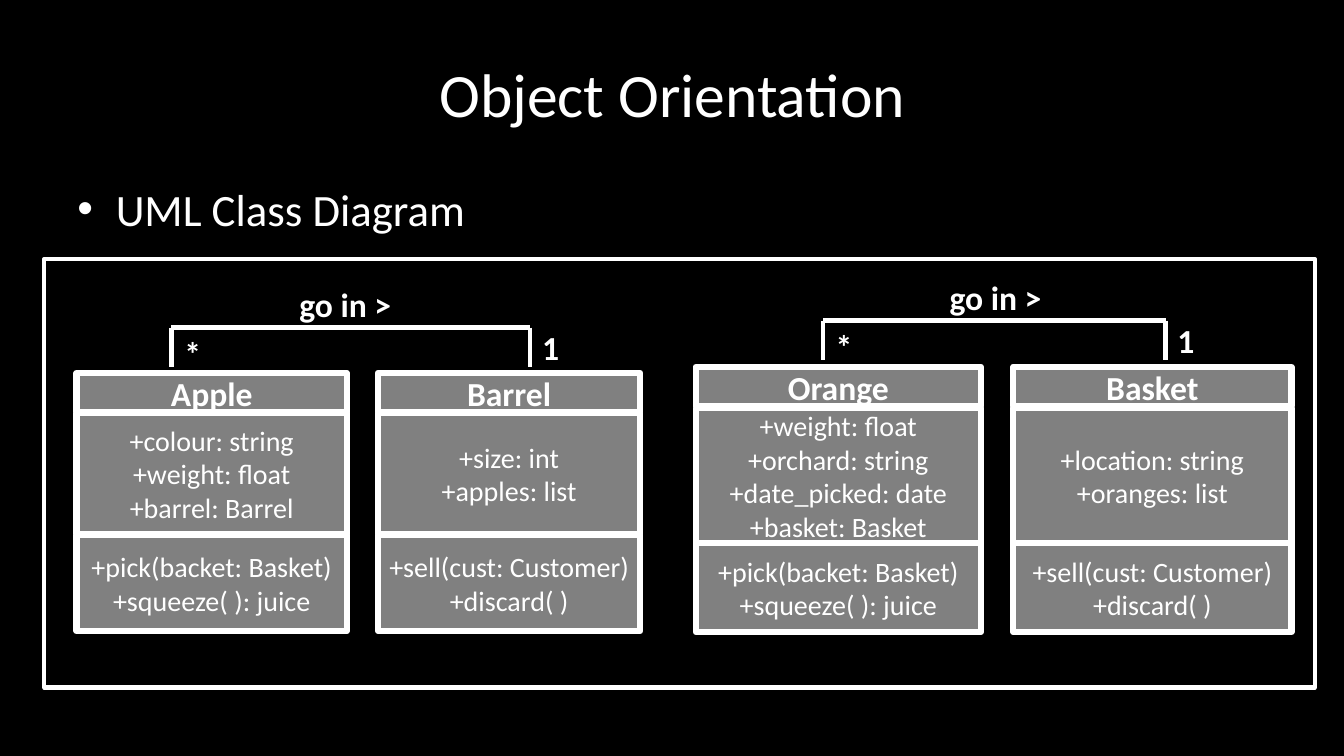
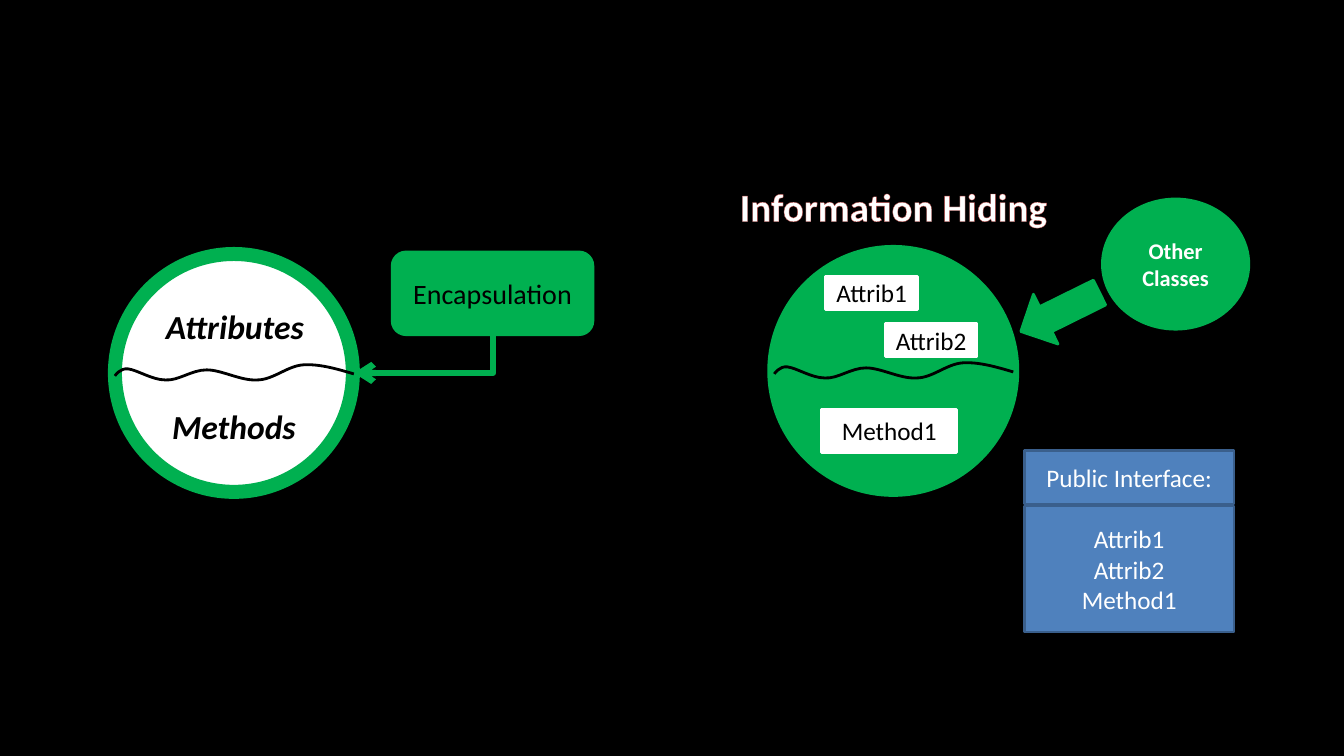
from lxml import etree
from pptx import Presentation
from pptx.dml.color import RGBColor
from pptx.enum.shapes import MSO_CONNECTOR as CONNECTOR, MSO_SHAPE as SHAPE
from pptx.enum.text import MSO_ANCHOR as ANCHOR, PP_ALIGN as ALIGN
from pptx.oxml.ns import qn
from pptx.util import Pt

PX = 9144  # one px is a hundredth of an inch
FONT = "Calibri"
BLACK, WHITE, GRAY = "000000", "FFFFFF", "808080"
GREEN, BLUE, DARK_BLUE, RED = "00B050", "4F81BD", "3A5F8C", "C0504D"
color = RGBColor.from_string


def write(shape, text, size=20, ink=WHITE, bold=False, italic=False,
          align=ALIGN.CENTER, anchor=ANCHOR.MIDDLE, wrap=True, bullet=None):
    frame = shape.text_frame
    frame.word_wrap = wrap
    frame.vertical_anchor = anchor
    for number, line in enumerate(text.split("\n")):
        paragraph = frame.add_paragraph() if number else frame.paragraphs[0]
        paragraph.alignment = align
        if bullet:
            properties = paragraph._p.get_or_add_pPr()
            properties.set("marL", str(38 * PX))
            properties.set("indent", str(-38 * PX))
            etree.SubElement(properties, qn("a:buFont")).set("typeface", "Arial")
            etree.SubElement(properties, qn("a:buChar")).set("char", bullet)
        run = paragraph.add_run()
        run.text = line
        font = run.font
        font.name, font.size = FONT, Pt(size)
        font.bold, font.italic = bold, italic
        font.color.rgb = color(ink)
    return shape


def add_box(slide, kind, bounds, fill, line, width):
    shape = slide.shapes.add_shape(kind, *[value * PX for value in bounds])
    shape.shadow.inherit = False
    if fill:
        shape.fill.solid()
        shape.fill.fore_color.rgb = color(fill)
    else:
        shape.fill.background()
    shape.line.color.rgb = color(line)
    shape.line.width = Pt(width)
    return shape


presentation = Presentation()
presentation.slide_width, presentation.slide_height = 1333 * PX, 750 * PX
background = presentation.slide_master.background.fill
background.solid()
background.fore_color.rgb = color(BLACK)
connectors = []  # connector, colour, width

# Slide 1: class diagram
slide = presentation.slides.add_slide(presentation.slide_layouts[5])
title = slide.shapes.title
title.left, title.top, title.width, title.height = 67 * PX, 30 * PX, 1200 * PX, 125 * PX
write(title, "Object Orientation", size=44)
body = slide.shapes.add_textbox(67 * PX, 175 * PX, 1200 * PX, 495 * PX)
write(body, "UML Class Diagram", size=32, align=ALIGN.LEFT, anchor=ANCHOR.TOP, bullet="•")

# Each group: row tops and heights, association (left, right, top, label left), classes
groups = [
    ([(370, 39), (410, 120), (531, 95)], (170, 526, 325, 287), [
        (76, 268, ["Apple", "+colour: string\n+weight: float\n+barrel: Barrel",
                   "+pick(backet: Basket)\n+squeeze( ): juice"]),
        (375, 260, ["Barrel", "+size: int\n+apples: list",
                    "+sell(cust: Customer)\n+discard( )"]),
    ]),
    ([(364, 39), (405, 134), (539, 88)], (816, 1156, 318, 932), [
        (690, 283, ["Orange", "+weight: float\n+orchard: string\n+date_picked: date\n+basket: Basket",
                    "+pick(backet: Basket)\n+squeeze( ): juice"]),
        (1005, 276, ["Basket", "+location: string\n+oranges: list",
                     "+sell(cust: Customer)\n+discard( )"]),
    ]),
]
for rows, (left, right, top, label_left), classes in groups:
    for class_left, class_width, texts in classes:
        for number, ((row_top, row_height), text) in enumerate(zip(rows, texts)):
            cell = add_box(slide, SHAPE.RECTANGLE,
                           (class_left, row_top, class_width, row_height), GRAY, WHITE, 4.5)
            write(cell, text, size=20 if number else 24, bold=number == 0)

    # Association bracket and its labels
    for ends in [(right, top, left, top), (left, top, left, top + 39),
                 (right, top, right, top + 39)]:
        connector = slide.shapes.add_connector(CONNECTOR.STRAIGHT, *[end * PX for end in ends])
        connectors.append((connector, WHITE, 3))
    for text, text_left, text_top, text_width in [
            ("*", left + 3, top, 42), ("1", right + 2, top - 6, 37),
            ("go in >", label_left, top - 48, 112)]:
        label = slide.shapes.add_textbox(text_left * PX, text_top * PX, text_width * PX, 50 * PX)
        write(label, text, size=24, bold=True, align=ALIGN.LEFT, anchor=ANCHOR.TOP, wrap=False)

add_box(slide, SHAPE.RECTANGLE, (44, 257, 1260, 425), None, WHITE, 3)

# Slide 2: encapsulation and information hiding
slide = presentation.slides.add_slide(presentation.slide_layouts[6])

# Class circles, each split by a wave: a start, then three points for every cubic curve
wave_points = [
    (237, 9),
    (220, 4), (203, -1), (187, 0), (171, 1), (157, 15), (141, 15),
    (125, 16), (106, 5), (91, 5), (76, 5), (63, 16), (50, 15),
    (37, 15), (22, 5), (13, 4), (5, 3), (0, 11), (0, 11),
]
for left, top, fill in [(114, 252, WHITE), (768, 250, GREEN)]:
    add_box(slide, SHAPE.OVAL, (left, top, 236, 236), fill, GREEN, 10)
    places = [((left + x) * PX, (top + 110 + y) * PX) for x, y in wave_points]
    builder = slide.shapes.build_freeform(*places[0])
    builder.add_line_segments(places[1:], close=False)
    wave = builder.convert_to_shape()
    wave.shadow.inherit = False
    wave.fill.background()
    wave.line.color.rgb = color(BLACK)
    wave.line.width = Pt(2)

    # Join every three segments into one cubic curve
    segments = list(wave._element.iter(qn("a:lnTo")))
    outline = segments[0].getparent()
    for first in range(0, len(segments), 3):
        curve = etree.SubElement(outline, qn("a:cubicBezTo"))
        for segment in segments[first:first + 3]:
            curve.append(segment[0])
            outline.remove(segment)

# Labelled shapes
for kind, bounds, fill, line, width, text, style in [
        (SHAPE.ROUNDED_RECTANGLE, (389, 250, 199, 82), GREEN, GREEN, 2, "Encapsulation", {"ink": BLACK}),
        (SHAPE.RECTANGLE, (819, 274, 91, 33), WHITE, WHITE, 2, "Attrib1", {"size": 18, "ink": BLACK}),
        (SHAPE.RECTANGLE, (878, 321, 91, 33), WHITE, WHITE, 2, "Attrib2", {"size": 18, "ink": BLACK}),
        (SHAPE.RECTANGLE, (815, 406, 134, 43), WHITE, WHITE, 2, "Method1", {"size": 18, "ink": BLACK}),
        (SHAPE.OVAL, (1099, 203, 134, 118), GREEN, GREEN, 10, "Other\nClasses", {"size": 16, "bold": True}),
        (SHAPE.RECTANGLE, (1016, 502, 208, 125), BLUE, DARK_BLUE, 2,
         "Attrib1\nAttrib2\nMethod1", {"size": 18}),
        (SHAPE.RECTANGLE, (1016, 447, 208, 53), BLUE, DARK_BLUE, 2, "Public Interface:", {"size": 18})]:
    write(add_box(slide, kind, bounds, fill, line, width), text, **style)

# Free text
for text, bounds, style in [
        ("Attributes", (153, 299, 160, 50), {"size": 24, "ink": BLACK, "italic": True}),
        ("Methods", (160, 398, 144, 50), {"size": 24, "ink": BLACK, "italic": True}),
        ("Information Hiding", (722, 176, 328, 57), {"size": 28})]:
    label = slide.shapes.add_textbox(*[value * PX for value in bounds])
    write(label, text, bold=True, anchor=ANCHOR.TOP, wrap=False, **style)

# Thin red outline on the heading, the last label
heading_font = label.text_frame.paragraphs[0].runs[0].font
letter_line = etree.Element(qn("a:ln"), w=str(Pt(0.52)))
letter_fill = etree.SubElement(letter_line, qn("a:solidFill"))
etree.SubElement(letter_fill, qn("a:srgbClr"), val=RED)
heading_font._element.insert(0, letter_line)

# Arrows
block_arrow = add_box(slide, SHAPE.RIGHT_ARROW, (1008, 282, 87, 55), GREEN, GREEN, 2)
block_arrow.rotation = 153.7
elbow = slide.shapes.add_connector(CONNECTOR.ELBOW, 401 * PX, 282 * PX, 439 * PX, 420 * PX)
elbow_properties = elbow._element.spPr
elbow_properties.find(qn("a:prstGeom")).set("prst", "bentConnector2")
elbow_properties.find(qn("a:xfrm")).set("rot", str(90 * 60000))
connectors.append((elbow, GREEN, 4.5))

# Connector style
for connector, ink, width in connectors:
    connector.line.color.rgb = color(ink)
    connector.line.width = Pt(width)
    etree.SubElement(connector._element.spPr, qn("a:effectLst"))
etree.SubElement(elbow.line._get_or_add_ln(), qn("a:tailEnd"), type="arrow")

presentation.save("out.pptx")
